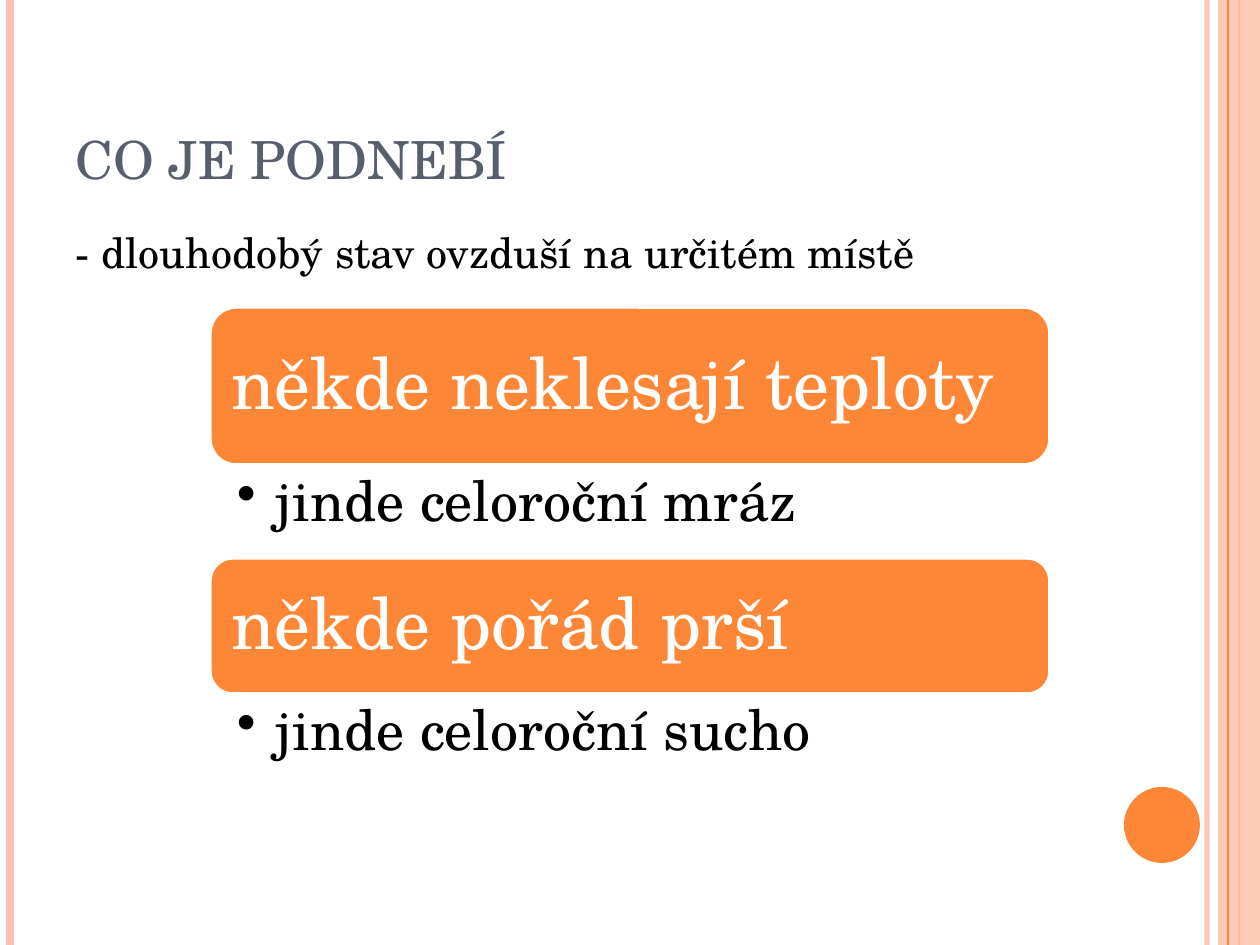
from lxml.etree import SubElement
from pptx import Presentation
from pptx.dml.color import RGBColor
from pptx.enum.shapes import MSO_CONNECTOR as Connector, MSO_SHAPE as Shape
from pptx.enum.text import MSO_ANCHOR as Anchor, PP_ALIGN as Align
from pptx.oxml.ns import qn
from pptx.util import Emu, Pt

PX_PER_INCH = 126
FONT = "TeX Gyre Schola"
ORANGE = RGBColor(0xFE, 0x86, 0x37)
PEACH = RGBColor(0xFE, 0xC3, 0xAE)
SLATE = RGBColor(0x57, 0x5F, 0x6D)
BLACK = RGBColor(0, 0, 0)
WHITE = RGBColor(0xFF, 0xFF, 0xFF)

ITEM_HEIGHT = 93
CORNER = 0.1667
TOPICS = [
    ("někde neklesají teploty", "jinde celoroční mráz", 158),
    ("někde pořád prší", "jinde celoroční sucho", 136),
]


def px(length):
    return Emu(round(length * 914400 / PX_PER_INCH))


def set_opacity(fill_parent, percent):
    color = next(fill_parent.iter(qn("a:srgbClr")))
    SubElement(color, qn("a:alpha"), val=str(percent * 1000))


def add_stripe(slide, x, height, color, width, opacity=100):
    stripe = slide.shapes.add_connector(Connector.STRAIGHT, px(x), 0, px(x), px(height))
    stripe.line.color.rgb = color
    stripe.line.width = Pt(width)
    properties = stripe._element.spPr
    if opacity < 100:
        set_opacity(properties, opacity)
    SubElement(properties, qn("a:effectLst"))


def add_plain_shape(slide, kind, left, top, width, height, color):
    shape = slide.shapes.add_shape(kind, px(left), px(top), px(width), px(height))
    shape.shadow.inherit = False
    shape.fill.solid()
    shape.fill.fore_color.rgb = color
    shape.line.fill.background()
    return shape


def write(shape, text, size, color, insets, anchor=Anchor.TOP):
    frame = shape.text_frame
    frame.word_wrap = True
    frame.vertical_anchor = anchor
    frame.margin_left, frame.margin_top, frame.margin_right, frame.margin_bottom = map(px, insets)
    paragraph = frame.paragraphs[0]
    paragraph.text = text
    paragraph.alignment = Align.LEFT
    paragraph.font.name = FONT
    paragraph.font.size = Pt(size)
    paragraph.font.color.rgb = color
    return paragraph


def add_text(slide, left, top, width, height, *style):
    box = slide.shapes.add_textbox(px(left), px(top), px(width), px(height))
    return write(box, *style)


def add_decoration(slide, width, height):
    add_stripe(slide, width - 53, height, PEACH, 3, 93)
    add_stripe(slide, 10, height, PEACH, 4.5)
    add_stripe(slide, width - 21, height, ORANGE, 1.5)
    band = add_plain_shape(slide, Shape.RECTANGLE, width - 42, 0, 42, height, PEACH)
    set_opacity(band._element.spPr, 87)
    add_stripe(slide, width - 32, height, ORANGE, 0.75)
    add_plain_shape(slide, Shape.OVAL, width - 136, height - 158, 76, 76, ORANGE)


def add_heading(slide, left, top, width):
    insets = (13, 6, 13, 6)
    add_text(slide, left, top, width, 158, "CO JE PODNEBÍ", 30, SLATE, insets, Anchor.BOTTOM)
    definition = add_text(slide, left, top + 182, width, 80,
                          "- dlouhodobý stav ovzduší na určitém místě", 24, BLACK, insets)
    definition.space_before = Pt(6)


def add_topic(slide, left, top, width, height, title, item):
    card = add_plain_shape(slide, Shape.ROUNDED_RECTANGLE, left, top, width, height, ORANGE)
    card.adjustments[0] = CORNER
    card.line.color.rgb = WHITE
    card.line.width = Pt(2)
    inset = 21 - 0.29 * CORNER * height
    heading = write(card, title, 41, WHITE, (inset,) * 4, Anchor.MIDDLE)
    heading.line_spacing = 0.9

    bullet = add_text(slide, left, top + height, width, ITEM_HEIGHT,
                      item, 32, BLACK, (27, 8, 40, 8))
    bullet.line_spacing = 0.9
    properties = bullet._p.get_or_add_pPr()
    properties.set("marL", str(px(39)))
    properties.set("indent", str(-px(39)))
    SubElement(properties, qn("a:buChar"), char="•")
    properties.append(properties.find(qn("a:defRPr")))


def add_topics(slide, left, top, width):
    for title, item, height in TOPICS:
        add_topic(slide, left, top, width, height, title, item)
        top += height + ITEM_HEIGHT


def main():
    width, height = 1260, 945
    presentation = Presentation()
    presentation.slide_width, presentation.slide_height = px(width), px(height)
    slide = presentation.slides.add_slide(presentation.slide_layouts[6])
    add_decoration(slide, width, height)
    add_heading(slide, 63, 38, 1029)
    add_topics(slide, 210, 307, 840)
    presentation.save("out.pptx")


if __name__ == "__main__":
    main()
